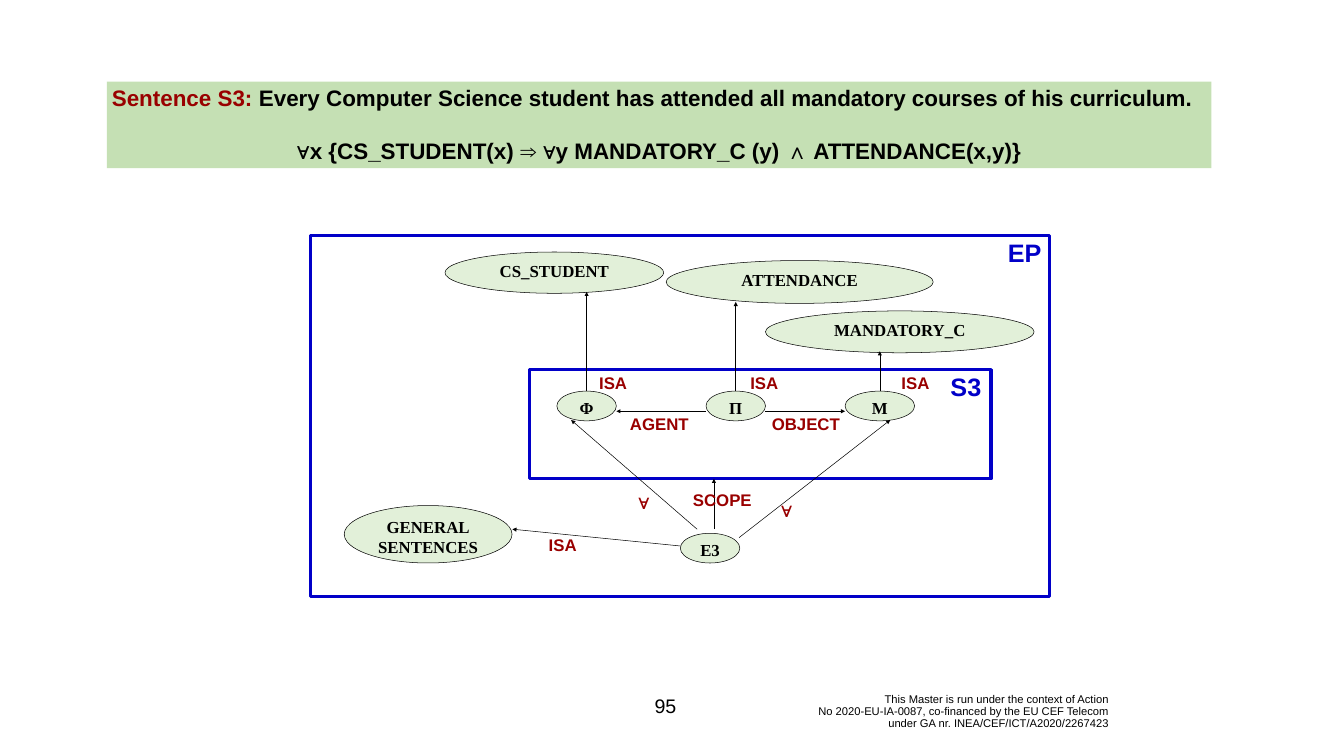
from typing import NamedTuple

from lxml import etree
from pptx import Presentation
from pptx.dml.color import RGBColor
from pptx.enum.shapes import MSO_CONNECTOR, MSO_SHAPE
from pptx.enum.text import MSO_ANCHOR, MSO_AUTO_SIZE, PP_ALIGN
from pptx.oxml.ns import qn
from pptx.util import Pt

LEFT, CENTER, RIGHT = PP_ALIGN.LEFT, PP_ALIGN.CENTER, PP_ALIGN.RIGHT
TOP, MIDDLE = MSO_ANCHOR.TOP, MSO_ANCHOR.MIDDLE
NO_AUTOFIT = MSO_AUTO_SIZE.NONE
ELLIPSE, RECTANGLE = MSO_SHAPE.OVAL, MSO_SHAPE.RECTANGLE
STRAIGHT = MSO_CONNECTOR.STRAIGHT

SANS, SERIF = "Arial", "Times New Roman"
COLORS = {
    "banner": "C5E0B4",
    "node": "E2F0D9",
    "ink": "000000",
    "label": "990000",
    "frame": "0100C8",
}


class Node(NamedTuple):
    text: str
    left: float
    top: float
    width: float
    height: float

    @property
    def middle(self) -> float:
        return self.left + self.width / 2

    @property
    def right(self) -> float:
        return self.left + self.width


class Label(NamedTuple):
    text: str
    left: float
    top: float
    width: float = 120
    size: float = 24
    color: str = "label"


class Frame(NamedTuple):
    left: float
    top: float
    width: float
    height: float


class Arrow(NamedTuple):
    start_x: float
    start_y: float
    end_x: float
    end_y: float


def color(name: str) -> RGBColor:
    return RGBColor.from_string(COLORS[name])


def style_font(font, size: float, name: str, ink: str, bold: bool) -> None:
    font.size, font.name, font.bold = Pt(size), name, bold
    font.color.rgb = color(ink)


def style_text(box, size: float, name: str = SANS, ink: str = "ink",
               bold: bool = False, align=CENTER, anchor=TOP) -> None:
    box.text_frame.word_wrap = True
    box.text_frame.vertical_anchor = anchor
    for para in box.text_frame.paragraphs:
        para.alignment = align
        for span in para.runs:
            style_font(span.font, size, name, ink, bold)


def add_text(page, text: str, left: float, top: float, width: float, height: float):
    box = page.shapes.add_textbox(Pt(left), Pt(top), Pt(width), Pt(height))
    box.text_frame.text = text
    return box


def draw_node(page, node: Node) -> None:
    box = page.shapes.add_shape(ELLIPSE, Pt(node.left), Pt(node.top),
                                Pt(node.width), Pt(node.height))
    box.shadow.inherit = False
    box.fill.solid()
    box.fill.fore_color.rgb = color("node")
    box.line.color.rgb = color("ink")
    box.line.width = Pt(0.75)
    box.text_frame.text = node.text
    style_text(box, 24, SERIF, bold=True)


def draw_frame(page, frame: Frame) -> None:
    box = page.shapes.add_shape(RECTANGLE, *(Pt(length) for length in frame))
    box.shadow.inherit = False
    box.fill.background()
    box.line.color.rgb = color("frame")
    box.line.width = Pt(4.5)


def draw_label(page, label: Label) -> None:
    height = label.size * 1.2 + 7.2
    box = add_text(page, label.text, label.left, label.top, label.width, height)
    style_text(box, label.size, ink=label.color, bold=True)


def draw_arrow(page, arrow: Arrow) -> None:
    line = page.shapes.add_connector(STRAIGHT, *(Pt(length) for length in arrow))
    line.line.color.rgb = color("ink")
    line.line.width = Pt(0.75)
    properties = line._element.spPr
    etree.SubElement(properties.find(qn("a:ln")), qn("a:tailEnd"), type="triangle")
    etree.SubElement(properties, qn("a:effectLst"))


def draw_banner(page) -> None:
    banner = page.shapes.title
    banner.left, banner.top = Pt(152.6), Pt(116.6)
    banner.width, banner.height = Pt(1578.2), Pt(123.8)
    banner.fill.solid()
    banner.fill.fore_color.rgb = color("banner")
    frame = banner.text_frame
    frame.auto_size = NO_AUTOFIT
    sentence = frame.paragraphs[0]
    sentence.add_run().text = "Sentence S3: "
    sentence.add_run().text = ("Every Computer Science student has attended all "
                               "mandatory courses of his curriculum.")
    formula = frame.add_paragraph()
    formula.text = "∀x {CS_STUDENT(x) ⇒ ∀y MANDATORY_C (y) ∧ ATTENDANCE(x,y)}"
    style_text(banner, 32, bold=True, align=LEFT)
    sentence.runs[0].font.color.rgb = color("label")
    formula.alignment = CENTER
    formula.space_before = Pt(37)


# Individuals stand in one row inside the S3 frame
ROW_TOP, ARROW_Y = 558.7, 587.5
PHI = Node("Φ", 795.6, ROW_TOP, 85, 42.5)
PI = Node("Π", 1008.7, ROW_TOP, 85, 42.5)
MU = Node("Μ", 1207.4, ROW_TOP, 99.4, 42.5)
NODES = [
    Node("CS_STUDENT", 635.8, 360, 312.5, 59),
    Node("ATTENDANCE", 951.8, 372.2, 381.6, 61.2),
    Node("MANDATORY_C", 1093.7, 444.2, 383.8, 59.8),
    Node("GENERAL\nSENTENCES", 491.8, 722.2, 239.8, 82.1),
    PHI, PI, MU,
    Node("Ε3", 972, 761.8, 85, 42.5),
]
FRAMES = [Frame(756, 528, 660, 156), Frame(444, 336, 1056, 516)]
ARROWS = [
    Arrow(PI.left, ARROW_Y, PHI.right, ARROW_Y),
    Arrow(PI.right, ARROW_Y, MU.left, ARROW_Y),
    *(Arrow(node.middle, ROW_TOP, node.middle, end_y)
      for node, end_y in ((PHI, 416.9), (PI, 431.3), (MU, 501.8))),
    Arrow(972, 780, 732, 756),
    Arrow(996, 756, 816, 600),
    Arrow(1056, 768, 1272, 600),
    Arrow(1020, 756, 1020, 684),
]
LABELS = [
    Label("OBJECT", 995.8, 588, 311),
    Label("AGENT", 792, 588, 300),
    *(Label("ISA", left, 528.5) for left in (816, 1032, 1248)),
    Label("ISA", 744, 761),
    Label("SCOPE", 948, 696, 168),
    Label("∀", 1064, 708, size=28),
    Label("∀", 860, 696, size=28),
    Label("ΕP", 1404, 336, size=36, color="frame"),
    Label("S3", 1320, 526.3, size=36, color="frame"),
]


def main() -> None:
    deck = Presentation()
    deck.slide_width, deck.slide_height = Pt(1920.24), Pt(1080)
    page = deck.slides.add_slide(deck.slide_layouts[5])

    # Sentence and its formula
    draw_banner(page)

    # Semantic network
    for node in NODES:
        draw_node(page, node)
    for frame in FRAMES:
        draw_frame(page, frame)
    for arrow in ARROWS:
        draw_arrow(page, arrow)
    for label in LABELS:
        draw_label(page, label)

    # Footer and page number
    footer = add_text(page, "This Master is run under the context of Action\v"
                      "No 2020-EU-IA-0087, co-financed by the EU CEF Telecom\v"
                      "under GA nr. INEA/CEF/ICT/A2020/2267423",
                      1081.4, 989.3, 509.8, 54.7)
    style_text(footer, 16, align=RIGHT, anchor=MIDDLE)
    footer.text_frame.paragraphs[0].line_spacing = 0.9
    number = add_text(page, "95", 910.8, 979.9, 79.9, 57.6)
    style_text(number, 28, anchor=MIDDLE)

    deck.save("out.pptx")


if __name__ == "__main__":
    main()
